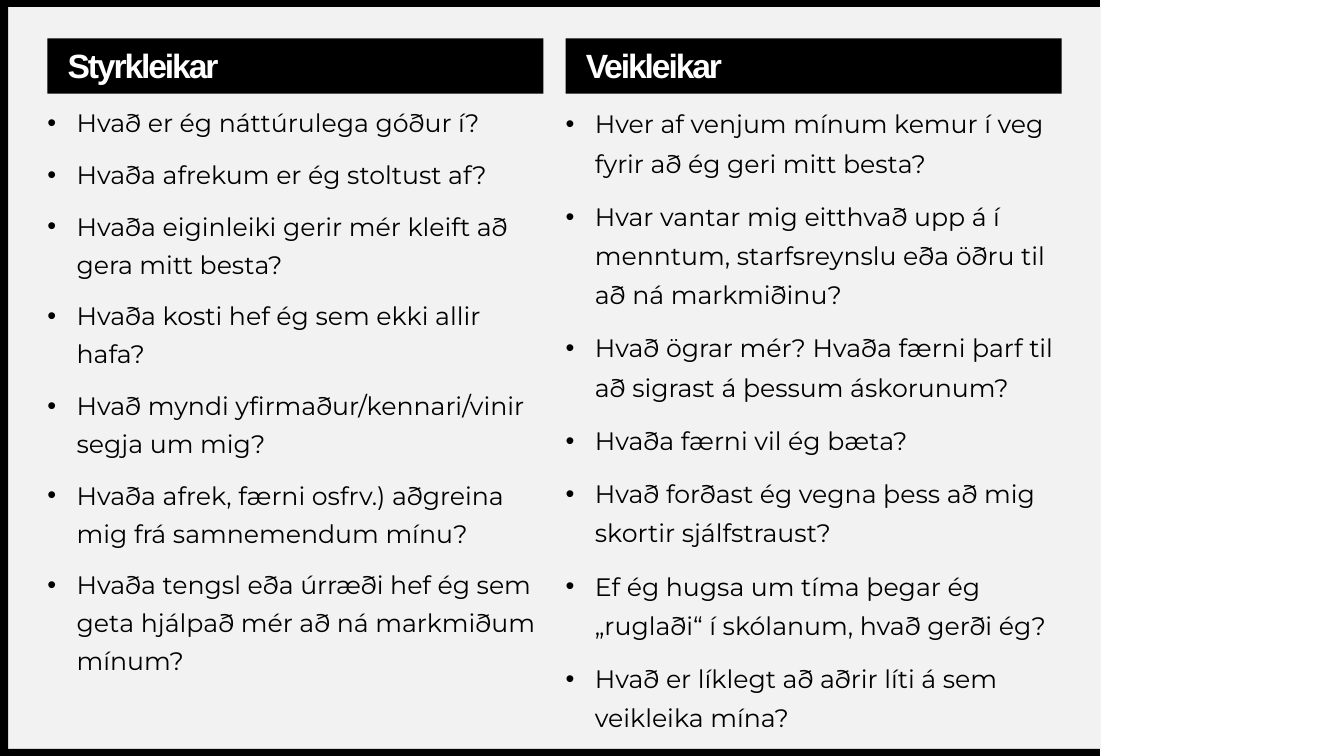
from dataclasses import dataclass

from lxml.etree import SubElement
from pptx import Presentation
from pptx.dml.color import RGBColor
from pptx.enum.shapes import MSO_SHAPE as Shape
from pptx.enum.text import MSO_ANCHOR as Anchor, PP_ALIGN as Align
from pptx.oxml.ns import qn
from pptx.util import Inches, Pt

BLACK, WHITE, GREY = "000000", "FFFFFF", "F2F2F2"
WIDTH = 4.92
INDENT = Inches(0.29)


@dataclass
class Box:
    left: float
    top: float
    width: float
    height: float
    fill: str = BLACK


@dataclass
class Column:
    left: float
    head: str
    height: float
    pitch: int
    items: list[str]


FRAME = [
    Box(0.08, 0.07, 10.84, 7.36, GREY),
    Box(0, 7.43, 10.91, 0.07),
    Box(0, 0, 10.91, 0.07),
    Box(0, 0.03, 0.08, 7.47),
]

COLUMNS = [
    Column(0.47, "Styrkleikar", 2.08, 27, [
        "Hvað er ég náttúrulega góður í?",
        "Hvaða afrekum er ég stoltust af?",
        "Hvaða eiginleiki gerir mér kleift að gera mitt besta?",
        "Hvaða kosti hef ég sem ekki allir hafa?",
        "Hvað myndi yfirmaður/kennari/vinir segja um mig?",
        "Hvaða afrek, færni osfrv.) aðgreina mig frá samnemendum mínu?",
        "Hvaða tengsl eða úrræði hef ég sem geta hjálpað mér að ná "
        "markmiðum mínum?",
    ]),
    Column(5.61, "Veikleikar", 2.76, 28, [
        "Hver af venjum mínum kemur í veg fyrir að ég geri mitt besta?",
        "Hvar vantar mig eitthvað upp á í menntum, starfsreynslu eða öðru "
        "til að ná markmiðinu?",
        "Hvað ögrar mér? Hvaða færni þarf til að sigrast á þessum áskorunum?",
        "Hvaða færni vil ég bæta?",
        "Hvað forðast ég vegna þess að mig skortir sjálfstraust?",
        "Ef ég hugsa um tíma þegar ég „ruglaði“ í skólanum, hvað gerði ég?",
        "Hvað er líklegt að aðrir líti á sem veikleika mína?",
    ]),
]


def color(code: str) -> RGBColor:
    return RGBColor.from_string(code)


def style(font, name: str, size: int, code: str, bold: bool = False) -> None:
    font.name, font.size, font.bold = name, Pt(size), bold
    font.color.rgb = color(code)


def inset(frame, left: float = 0, top: float = 0) -> None:
    frame.word_wrap = True
    frame.margin_left, frame.margin_top = Inches(left), Inches(top)
    frame.margin_right = frame.margin_bottom = 0


def add_box(slide, box: Box):
    shape = slide.shapes.add_shape(
        Shape.RECTANGLE, Inches(box.left), Inches(box.top),
        Inches(box.width), Inches(box.height))
    shape.shadow.inherit = False
    shape.fill.solid()
    shape.fill.fore_color.rgb = color(box.fill)
    shape.line.fill.background()
    return shape


def add_head(slide, col: Column) -> None:
    frame = add_box(slide, Box(col.left, 0.38, WIDTH, 0.55)).text_frame
    inset(frame, 0.2, 0.04)
    frame.vertical_anchor = Anchor.MIDDLE
    frame.text = col.head
    para = frame.paragraphs[0]
    para.alignment = Align.LEFT
    para.line_spacing, para.space_before = 0.9, Pt(10)
    font = para.runs[0].font
    style(font, "Arial", 24, WHITE, bold=True)
    para.runs[0]._r.get_or_add_rPr().set("spc", "-150")


def add_bullet(para) -> None:
    props = para._p.get_or_add_pPr()
    props.set("marL", str(INDENT))
    props.set("indent", str(-INDENT))
    SubElement(props, qn("a:buFont")).set("typeface", "Arial")
    SubElement(props, qn("a:buChar")).set("char", "•")


def add_list(slide, col: Column) -> None:
    frame = slide.shapes.add_textbox(
        Inches(col.left), Inches(0.99),
        Inches(WIDTH), Inches(col.height)).text_frame
    inset(frame)
    frame.text = "\n".join(col.items)
    for para in frame.paragraphs:
        para.line_spacing, para.space_before = Pt(col.pitch), Pt(10)
        add_bullet(para)
        style(para.runs[0].font, "Montserrat", 18, BLACK)


def main() -> None:
    deck = Presentation()
    deck.slide_width, deck.slide_height = Inches(13.33), Inches(7.5)
    slide = deck.slides.add_slide(deck.slide_layouts[6])

    # Grey panel and its black edges
    for box in FRAME:
        add_box(slide, box)

    # Strengths and weaknesses
    for col in COLUMNS:
        add_head(slide, col)
        add_list(slide, col)

    deck.save("out.pptx")


if __name__ == "__main__":
    main()
